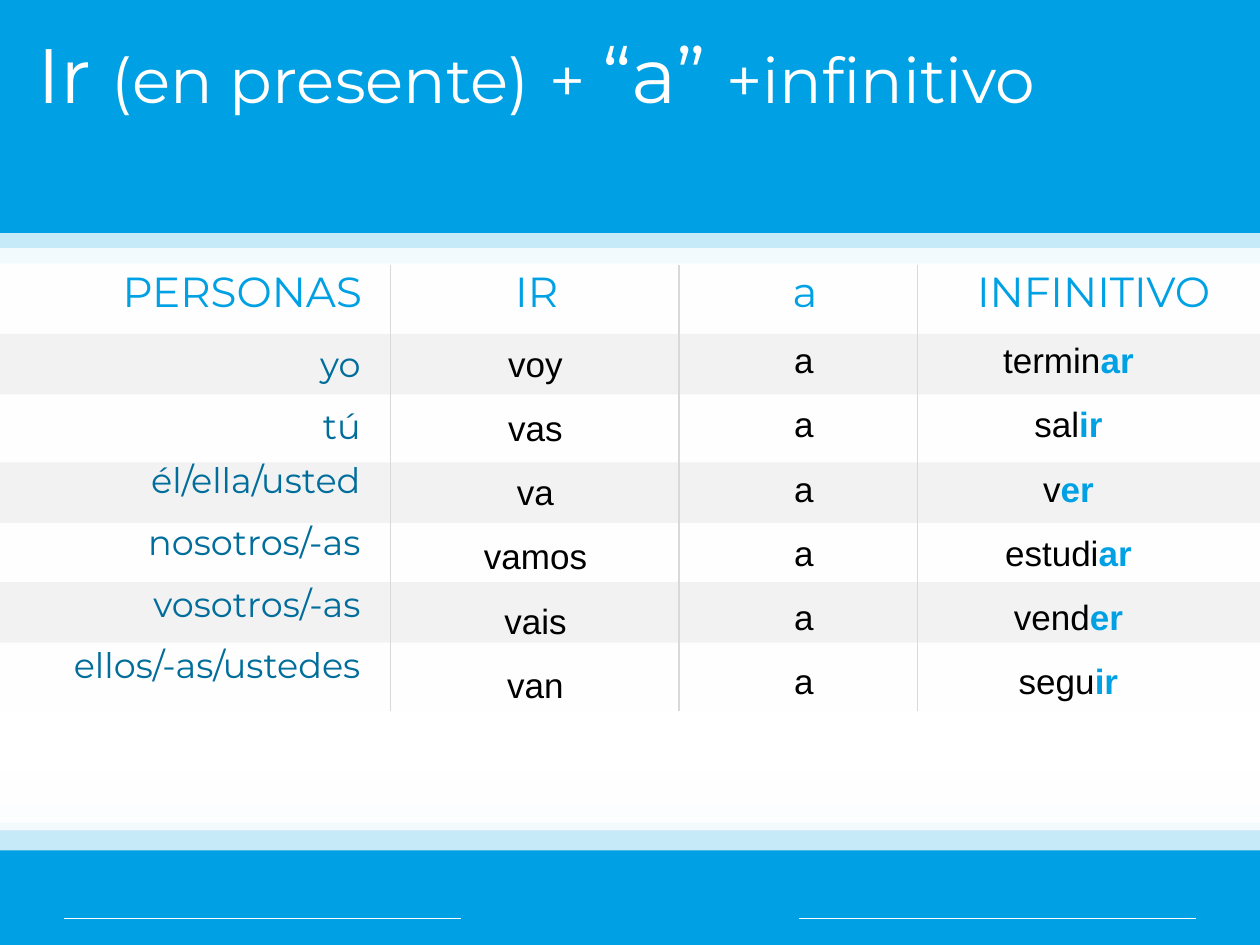
from lxml import etree
from pptx import Presentation, util as u
from pptx.dml.color import RGBColor
from pptx.enum import shapes, text
from pptx.oxml.ns import qn

BLUE, DARK_BLUE, WHITE = "00A1E4", "006D9B", "FFFFFF"
BLACK, STRIPE, RULE = "000000", "F2F2F2", "D9D9D9"
LEFT, CENTER, RIGHT = text.PP_ALIGN.LEFT, text.PP_ALIGN.CENTER, text.PP_ALIGN.RIGHT
WIDTH, HEIGHT, FOOTER = 10, 7.5, 6.98

presentation = Presentation()
presentation.slide_width, presentation.slide_height = u.Inches(WIDTH), u.Inches(HEIGHT)
slide = presentation.slides.add_slide(presentation.slide_layouts[6])


def color(value):
    return RGBColor.from_string(value)


def add_text(box, paragraphs, align, font, space=0, spacing=1.0):
    """Add a text box; each paragraph is a list of (wording, size, color, bold) runs."""
    frame = slide.shapes.add_textbox(*map(u.Inches, box)).text_frame
    frame.word_wrap = True
    for index, runs in enumerate(paragraphs):
        paragraph = frame.add_paragraph() if index else frame.paragraphs[0]
        paragraph.alignment, paragraph.line_spacing = align, spacing
        paragraph.space_before = u.Pt(space if index else 0)
        for wording, size, tint, bold in runs:
            for position, line in enumerate(wording.split("\n")):
                if position:
                    paragraph.add_line_break()
                run = paragraph.add_run()
                run.text = line
                run.font.name, run.font.size = font, u.Pt(size)
                run.font.bold, run.font.color.rgb = bold, color(tint)
    return frame


# Back to front: left, top, width, height, color, then opacity (bands) or weight (rules)
layers = [
    (0, 0, WIDTH, HEIGHT, BLUE, 100),
    (0, FOOTER, WIDTH, HEIGHT - FOOTER, BLUE, 100),
    (0.51, 7.29, 8.98, 0, WHITE, 0.25),
    (3.66, FOOTER, 2.68, HEIGHT - FOOTER, BLUE, 100),
]
layers += [(0, top, WIDTH, height, WHITE, 78) for top, height in (
    (2.09, 0.71), (1.97, 0.71), (1.85, 0.51), (2.95, 3.58), (2.1, 4.09),
    (2.53, 3.38), (5.83, 0.92), (5.67, 0.92), (2.2, 4.18))]
layers += [(0, top, WIDTH, 0.48, fill, 100) for top, fill in (
    (4.62, STRIPE), (3.67, STRIPE), (2.65, STRIPE), (5.64, WHITE))]
layers += [(x, 2.1, 0, 3.54, RULE, 0.75) for x in (3.1, 5.39, 7.28)]

for left, top, width, height, tint, value in layers:
    if not (width and height):
        rule = slide.shapes.add_connector(
            shapes.MSO_CONNECTOR.STRAIGHT,
            *map(u.Inches, (left, top, left + width, top + height)))
        rule.line.color.rgb, rule.line.width = color(tint), u.Pt(value)
        etree.SubElement(rule._element.spPr, qn("a:effectLst"))
        continue
    band = slide.shapes.add_shape(
        shapes.MSO_SHAPE.RECTANGLE, *map(u.Inches, (left, top, width, height)))
    band.shadow.inherit = False
    band.fill.solid()
    band.fill.fore_color.rgb = color(tint)
    band.line.fill.background()
    if value < 100:
        fill_color = band._element.spPr.find(qn("a:solidFill"))[0]
        etree.SubElement(fill_color, qn("a:alpha")).set("val", str(value * 1000))

# Title
title_runs = [("Ir ", 44), ("(en presente)", 36), (" ", 44), ("+ ", 36),
              ("“a” ", 44), ("+infinitivo", 36)]
title = add_text((0.2, 0.21, 9.61, 1.42),
                 [[(wording, size, WHITE, False) for wording, size in title_runs]],
                 LEFT, "Montserrat")
title.margin_top = 0

# Column headings
for heading, left, width, align in (
        ("PERSONAS", 0.39, 2.58, RIGHT), ("IR", 3.13, 2.26, CENTER),
        ("a", 5.26, 2.26, CENTER), ("INFINITIVO", 7.36, 2.64, CENTER)):
    frame = add_text((left, 2.06, width, 0.5), [[(heading, 24, BLUE, False)]],
                     align, "Montserrat")
    frame.vertical_anchor = text.MSO_ANCHOR.MIDDLE

# Column bodies
persons = ["yo", "tú\nél/ella/usted", "nosotros/-as", "vosotros/-as", "ellos/-as/ustedes"]
forms = ["voy", "vas", "va", "vamos", "vais", "van"]
infinitives = [("termin", "ar"), ("sal", "ir"), ("v", "er"),
               ("estudi", "ar"), ("vend", "er"), ("segu", "ir")]

add_text((0.04, 2.57, 2.92, 2.98), [[(person, 20, DARK_BLUE, False)] for person in persons],
         RIGHT, "Montserrat", 4, 1.3)
for box, words in (((3.11, 2.57, 2.28, 3.05), forms),
                   ((5.24, 2.54, 2.28, 3.05), ["a"] * len(forms))):
    add_text(box, [[(word, 20, BLACK, False)] for word in words], CENTER, "Arial", 5.4, 1.3)
add_text((7.36, 2.54, 2.24, 3.05),
         [[(stem, 20, BLACK, False), (ending, 20, BLUE, True)] for stem, ending in infinitives],
         CENTER, "Arial", 5.4, 1.3)

presentation.save("out.pptx")
